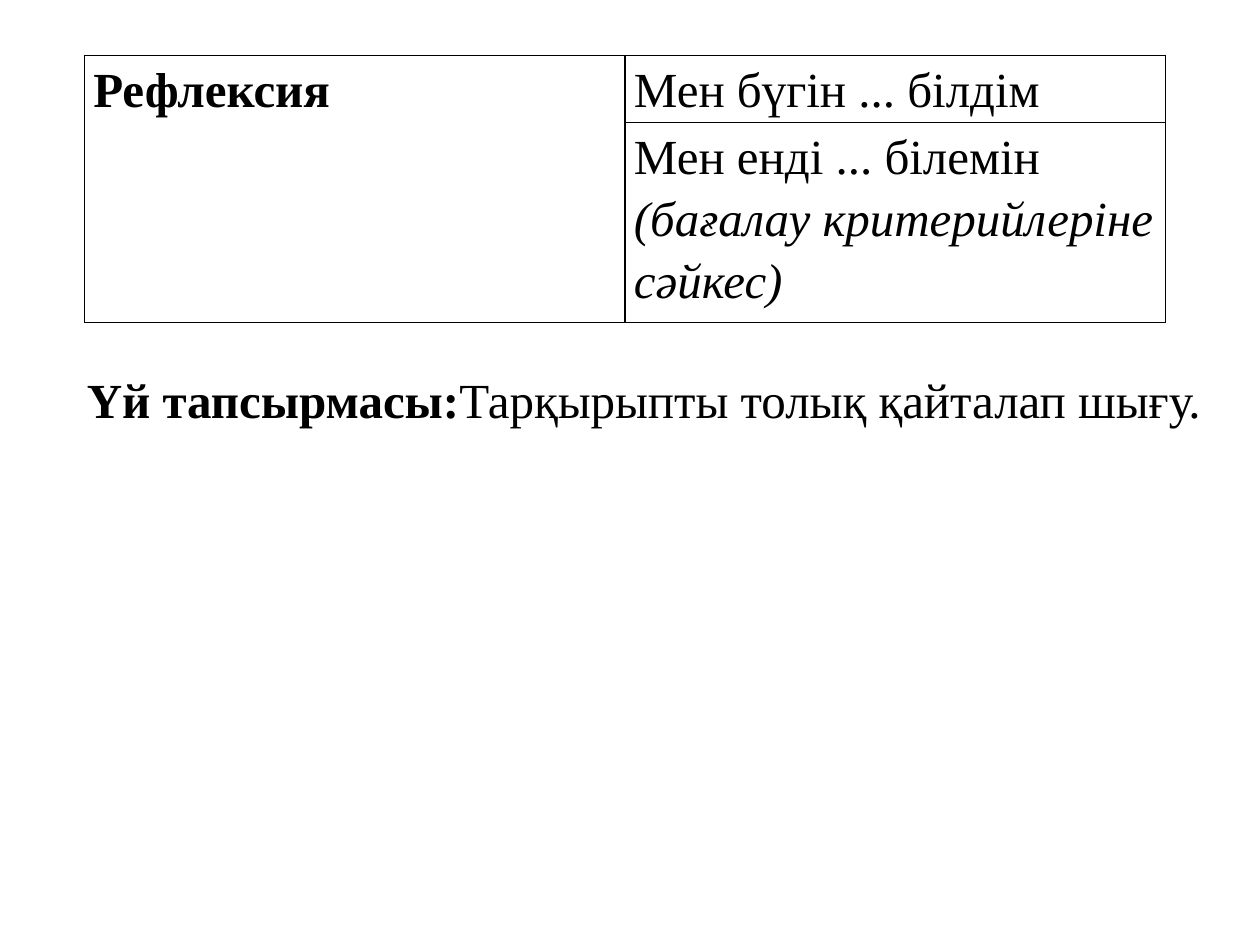
from lxml import etree
from pptx import Presentation
from pptx import util as u
from pptx.dml.color import RGBColor
from pptx.enum import text
from pptx.oxml.ns import qn

COLORS = {"ink": "000000"}
FONT = "Times New Roman"


def add_run(paragraph, wording, size=28, bold=False, italic=False, color="ink"):
    """Add formatted wording to a paragraph."""
    run = paragraph.add_run()
    run.text = wording
    run.font.name = FONT
    run.font.size = u.Pt(size)
    run.font.bold = bold
    run.font.italic = italic
    run.font.color.rgb = RGBColor.from_string(COLORS[color])


def set_borders(cell, color="ink", width=1):
    """Draw a solid line on all four sides of a cell."""
    properties = cell._tc.get_or_add_tcPr()
    for position, side in enumerate(("lnL", "lnR", "lnT", "lnB")):
        line = etree.Element(qn(f"a:{side}"), w=str(u.Pt(width)))
        fill = etree.SubElement(line, qn("a:solidFill"))
        etree.SubElement(fill, qn("a:srgbClr"), val=COLORS[color])
        properties.insert(position, line)


def fill_cell(cell, lines):
    """Write one paragraph for each (wording, format) pair in a cell."""
    cell.margin_left = cell.margin_right = u.Cm(0.18)
    cell.margin_top = cell.margin_bottom = 0
    frame = cell.text_frame
    for number, (wording, style) in enumerate(lines):
        paragraph = frame.add_paragraph() if number else frame.paragraphs[0]
        paragraph.line_spacing = 1.15
        add_run(paragraph, wording, **style)


def add_reflection(slide, left, top, width, row_heights):
    """Place the reflection table with its heading spanning both rows."""
    table = slide.shapes.add_table(
        2, 2, u.Cm(left), u.Cm(top), u.Cm(width), u.Cm(sum(row_heights))
    ).table
    table.first_row = table.horz_banding = False
    for column in table.columns:
        column.width = u.Cm(width / 2)
    for row, height in zip(table.rows, row_heights):
        row.height = u.Cm(height)
    for cell in table.iter_cells():
        cell.fill.background()
        set_borders(cell)
    heading = table.cell(0, 0)
    heading.merge(table.cell(1, 0))
    fill_cell(heading, [("Рефлексия", {"bold": True})])
    fill_cell(table.cell(0, 1), [("Мен бүгін ... білдім", {})])
    fill_cell(table.cell(1, 1), [
        ("Мен енді ... білемін", {}),
        ("(бағалау критерийлеріне сәйкес)", {"italic": True}),
    ])


def add_homework(slide, left, top, width, height):
    """Place the homework line."""
    homework = slide.shapes.add_textbox(
        u.Cm(left), u.Cm(top), u.Cm(width), u.Cm(height)
    ).text_frame
    homework.word_wrap = True
    homework.auto_size = text.MSO_AUTO_SIZE.NONE
    paragraph = homework.paragraphs[0]
    add_run(paragraph, "Үй тапсырмасы:", bold=True)
    add_run(paragraph, "Тарқырыпты толық қайталап шығу.")


def main():
    """Build and save the slide."""
    deck = Presentation()
    deck.slide_width, deck.slide_height = u.Cm(25.4), u.Cm(19.05)
    slide = deck.slides.add_slide(deck.slide_layouts[6])
    add_reflection(slide, 1.7, 1.12, 21.8, (1.35, 4.03))
    add_homework(slide, 1.5, 7.32, 23.5, 2.64)
    deck.save("out.pptx")


if __name__ == "__main__":
    main()
